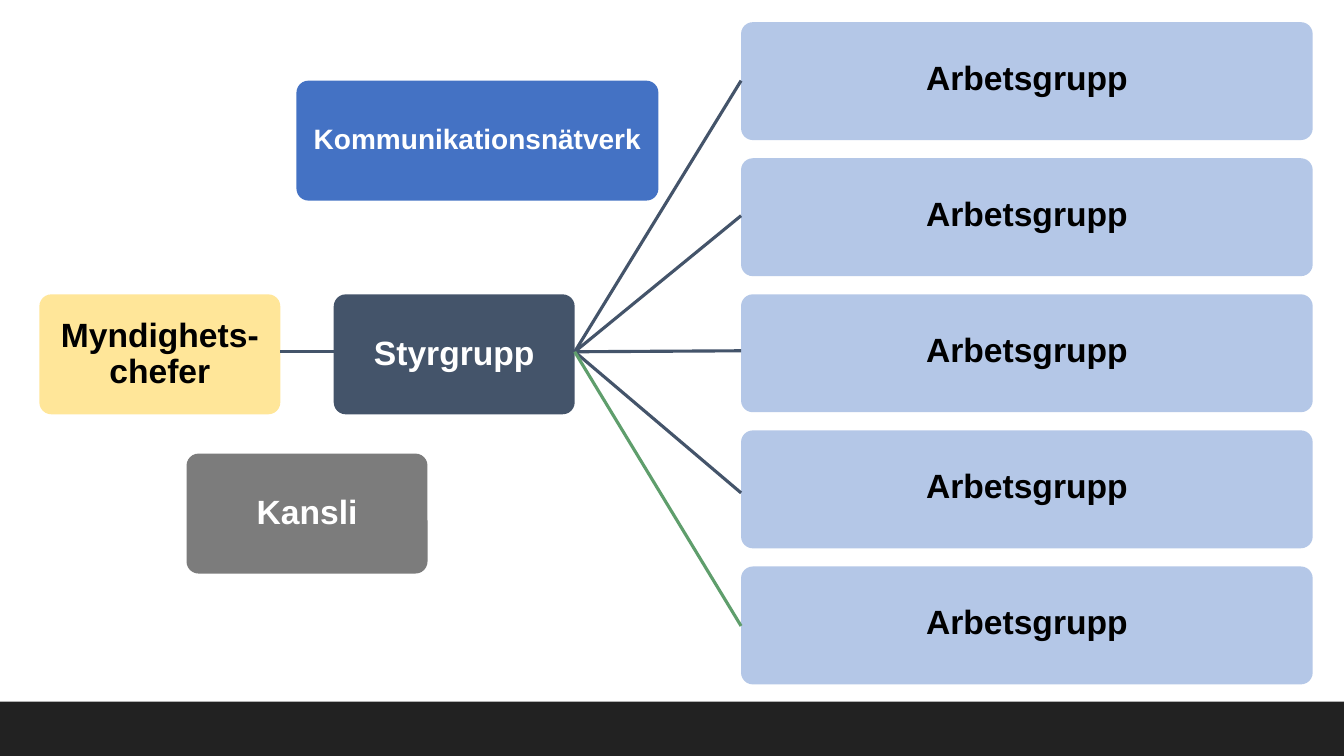
from lxml import etree
from pptx import Presentation
from pptx.dml.color import RGBColor
from pptx.enum.shapes import MSO_CONNECTOR, MSO_SHAPE
from pptx.enum.text import MSO_ANCHOR, PP_ALIGN
from pptx.oxml.ns import qn
from pptx.util import Inches, Pt

ROUNDED, RECTANGLE = MSO_SHAPE.ROUNDED_RECTANGLE, MSO_SHAPE.RECTANGLE
STRAIGHT = MSO_CONNECTOR.STRAIGHT
MIDDLE, CENTER = MSO_ANCHOR.MIDDLE, PP_ALIGN.CENTER

WHITE = RGBColor(0xFF, 0xFF, 0xFF)
BLACK = RGBColor(0x00, 0x00, 0x00)
FOOTER = RGBColor(0x22, 0x22, 0x22)
PALE_BLUE = RGBColor(0xB4, 0xC7, 0xE7)
BLUE = RGBColor(0x44, 0x72, 0xC4)
SLATE = RGBColor(0x44, 0x54, 0x6A)
YELLOW = RGBColor(0xFF, 0xE6, 0x99)
GREY = RGBColor(0x7C, 0x7C, 0x7C)
GREEN = RGBColor(0x5F, 0x9E, 0x6C)

# label, left, top, width, fill, text colour, text size
UNITS = [
    ("Styrgrupp", 3.31, 2.92, 2.39, SLATE, WHITE, 24),
    ("Myndighets-chefer", 0.39, 2.92, 2.39, YELLOW, BLACK, 24),
    ("Kansli", 1.85, 4.5, 2.39, GREY, WHITE, 24),
    ("Kommunikationsnätverk", 2.94, 0.8, 3.59, BLUE, WHITE, 20),
]
UNIT_HEIGHT = 1.19

# label, height where its line arrives, line colour
GROUPS = [
    ("Arbetsgrupp", 0.8, SLATE),
    ("Arbetsgrupp", 2.14, SLATE),
    ("Arbetsgrupp", 3.48, SLATE),
    ("Arbetsgrupp", 4.89, SLATE),
    ("Arbetsgrupp", 6.21, GREEN),
]
GROUP_LEFT, GROUP_TOP, GROUP_WIDTH, GROUP_HEIGHT = 7.35, 0.22, 5.67, 1.17
GROUP_STEP = 1.35

CHIEFS_RIGHT, BOARD_LEFT, BOARD_RIGHT, BOARD_MIDDLE = 2.78, 3.31, 5.7, 3.49


def add_filled(page, kind, left, top, width, height, fill):
    shape = page.shapes.add_shape(
        kind, Inches(left), Inches(top), Inches(width), Inches(height))
    shape.shadow.inherit = False
    shape.fill.solid()
    shape.fill.fore_color.rgb = fill
    shape.line.fill.background()
    return shape


def add_label_box(page, label, left, top, width, height, fill, color, size,
                  margin, line_spacing):
    box = add_filled(page, ROUNDED, left, top, width, height, fill)
    box.adjustments[0] = 0.1
    frame = box.text_frame
    frame.word_wrap = True
    frame.vertical_anchor = MIDDLE
    frame.margin_left = frame.margin_right = Inches(margin)
    frame.margin_top = frame.margin_bottom = Inches(margin)
    para = frame.paragraphs[0]
    para.alignment = CENTER
    para.line_spacing = line_spacing
    span = para.add_run()
    span.text = label
    span.font.name = "Arial"
    span.font.size = Pt(size)
    span.font.bold = True
    span.font.color.rgb = color


def add_line(page, start, end, color):
    line = page.shapes.add_connector(
        STRAIGHT, *(Inches(value) for value in (*start, *end)))
    line.line.color.rgb = color
    line.line.width = Pt(2.25)
    etree.SubElement(line._element.spPr, qn("a:effectLst"))


def main():
    deck = Presentation()
    deck.slide_width, deck.slide_height = Inches(13.33), Inches(7.5)
    page = deck.slides.add_slide(deck.slide_layouts[6])
    page.background.fill.solid()
    page.background.fill.fore_color.rgb = WHITE

    add_filled(page, RECTANGLE, 0, 6.96, 13.33, 0.54, FOOTER)
    for index, (label, _, _) in enumerate(GROUPS):
        add_label_box(page, label, GROUP_LEFT, GROUP_TOP + index * GROUP_STEP,
                      GROUP_WIDTH, GROUP_HEIGHT, PALE_BLUE, BLACK, 24,
                      0.05, Pt(22.6))
    for label, left, top, width, fill, color, size in UNITS:
        add_label_box(page, label, left, top, width, UNIT_HEIGHT, fill, color,
                      size, 0.06, 0.9)

    for _, arrival, color in GROUPS:
        add_line(page, (GROUP_LEFT, arrival), (BOARD_RIGHT, BOARD_MIDDLE), color)
    add_line(page, (CHIEFS_RIGHT, BOARD_MIDDLE), (BOARD_LEFT, BOARD_MIDDLE), SLATE)

    deck.save("out.pptx")


if __name__ == "__main__":
    main()
